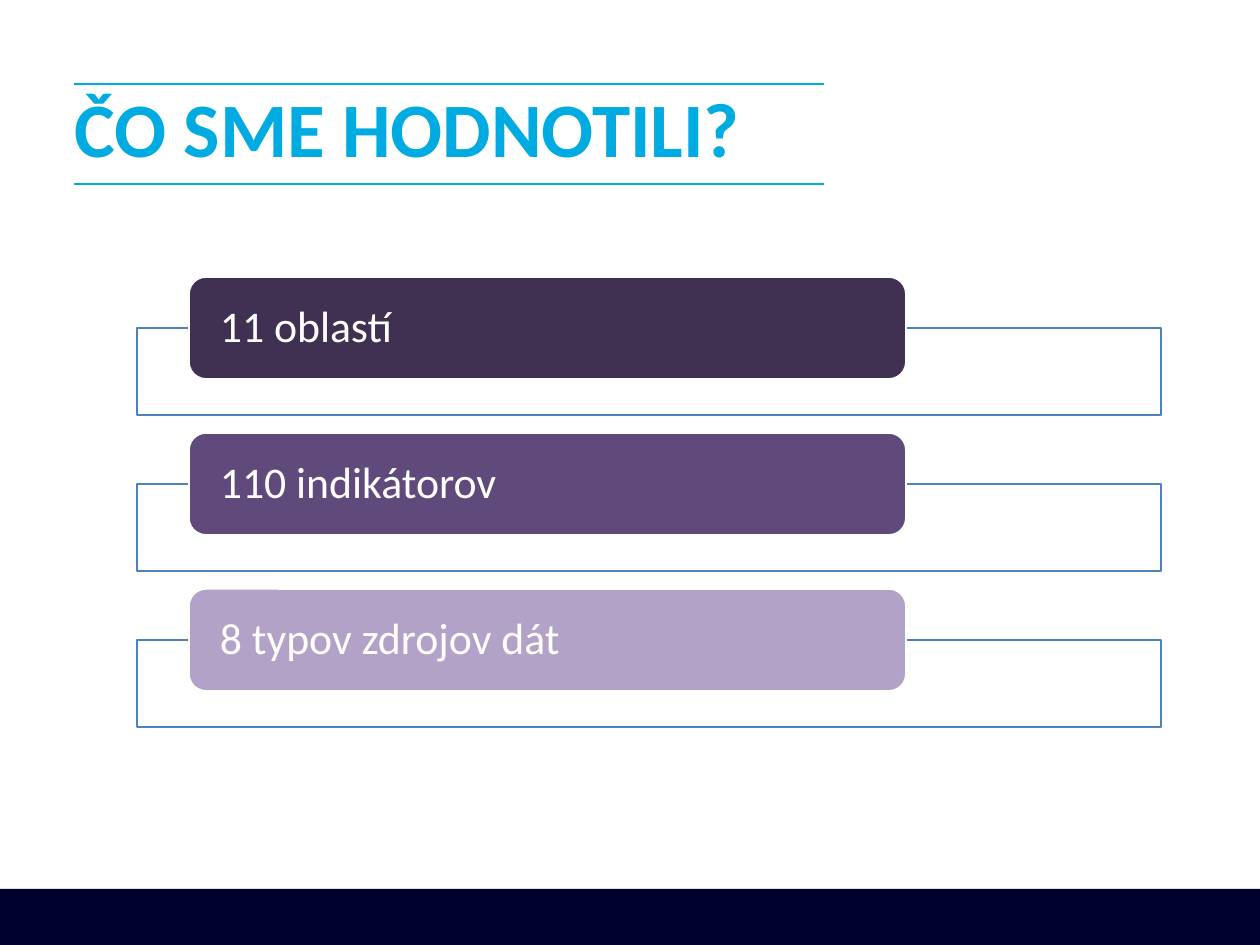
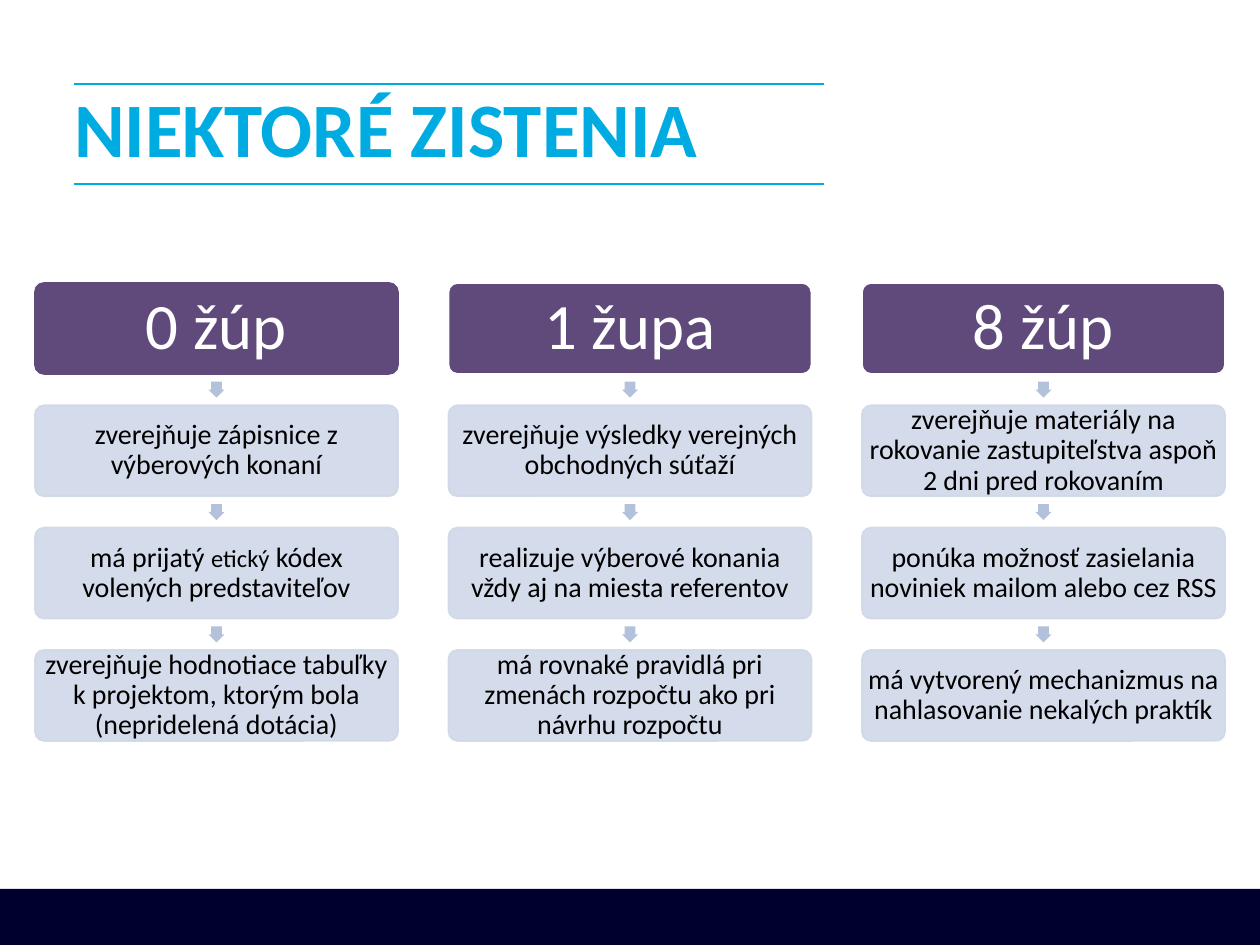
from lxml import etree
from pptx import Presentation
from pptx import util as u
from pptx.dml.color import RGBColor
from pptx.enum import shapes, text
from pptx.oxml import ns

SCALE = 914400 / 126
SLIDE_WIDTH, SLIDE_HEIGHT = 1260, 945
FONT = "Calibri"
COLOURS = {
    "title": "00ABE2",
    "footer": "00002E",
    "white": "FFFFFF",
    "black": "000000",
    "frame": "4F81BD",
    "dark_purple": "403152",
    "purple": "604A7B",
    "light_purple": "B3A2C7",
    "card": "D0D8E8",
    "arrow": "B3C1DB",
}
Shape = shapes.MSO_SHAPE

AREAS = [
    ("11 oblastí", "dark_purple"),
    ("110 indikátorov", "purple"),
    ("8 typov zdrojov dát", "light_purple"),
]
FINDINGS = [
    ("0 žúp", "purple", [
        "zverejňuje zápisnice z výberových konaní",
        [("má prijatý ", 16), ("etický", 14), (" kódex volených predstaviteľov", 16)],
        "zverejňuje hodnotiace tabuľky k projektom, ktorým bola (nepridelená dotácia)",
    ]),
    ("1 župa", "white", [
        "zverejňuje výsledky verejných obchodných súťaží",
        "realizuje výberové konania vždy aj na miesta referentov",
        "má rovnaké pravidlá pri zmenách rozpočtu ako pri návrhu rozpočtu",
    ]),
    ("8 žúp", "white", [
        "zverejňuje materiály na rokovanie zastupiteľstva aspoň 2 dni pred rokovaním",
        "ponúka možnosť zasielania noviniek mailom alebo cez RSS",
        "má vytvorený mechanizmus na nahlasovanie nekalých praktík",
    ]),
]


def px(length):
    return u.Emu(round(length * SCALE))


def rgb(name):
    return RGBColor.from_string(COLOURS[name])


def write(shape, content, size, colour, bold=False, centred=False, inset=(0, 0)):
    frame = shape.text_frame
    frame.word_wrap = True
    frame.vertical_anchor = text.MSO_ANCHOR.MIDDLE
    frame.margin_left = frame.margin_right = px(inset[0])
    frame.margin_top = frame.margin_bottom = px(inset[1])
    paragraph = frame.paragraphs[0]
    paragraph.alignment = text.PP_ALIGN.CENTER if centred else text.PP_ALIGN.LEFT
    paragraph.line_spacing = 0.9
    runs = [(content, size)] if isinstance(content, str) else content
    for words, run_size in runs:
        run = paragraph.add_run()
        run.text = words
        run.font.name = FONT
        run.font.size = u.Pt(run_size)
        run.font.bold = bold
        run.font.color.rgb = rgb(colour)


def add_block(slide, kind, box, fill, line=None, opacity=100, adjustments=()):
    shape = slide.shapes.add_shape(kind, *map(px, box))
    shape.shadow.inherit = False
    for index, value in enumerate(adjustments):
        shape.adjustments[index] = value
    shape.fill.solid()
    shape.fill.fore_color.rgb = rgb(fill)
    if line:
        shape.line.color.rgb = rgb(line)
        shape.line.width = u.Pt(1)
    else:
        shape.line.fill.background()
    if opacity < 100:
        for colour in shape.element.spPr.iter(ns.qn("a:srgbClr")):
            if colour.get("val") == COLOURS[fill]:
                etree.SubElement(colour, ns.qn("a:alpha"), val=str(opacity * 1000))
    return shape


def add_title(slide, title, box):
    left, top, width, height = box
    for y in (top + 6, top + 106):
        rule = slide.shapes.add_connector(
            shapes.MSO_CONNECTOR.STRAIGHT, px(left), px(y), px(left + 750), px(y))
        rule.line.color.rgb = rgb("title")
        rule.line.width = u.Pt(1)
        etree.SubElement(rule.element.spPr, ns.qn("a:effectLst"))
    title_box = slide.shapes.add_textbox(*map(px, box))
    write(title_box, title, 44, "title", bold=True)


def add_base_slide(presentation, title):
    slide = presentation.slides.add_slide(presentation.slide_layouts[6])
    add_block(slide, Shape.RECTANGLE, (0, 889, SLIDE_WIDTH, 56), "footer")
    add_title(slide, title, (74, 78, 873, 110))
    return slide


def add_area_list(slide, areas, box):
    left, top, width, height = box
    row_height = 138
    pitch = (height - row_height) / (len(areas) - 1)
    for index, (label, colour) in enumerate(areas):
        y = top + index * pitch
        add_block(slide, Shape.RECTANGLE, (left, y + 51, width, 87),
                  "white", "frame", opacity=90)
        tab = add_block(slide, Shape.ROUNDED_RECTANGLE, (left + 52, y, 717, 102),
                        colour, "white")
        write(tab, label, 25, "white", inset=(26, 0))


def add_finding_column(slide, heading, outline, findings, box):
    left, top, width, height = box
    card_height, arrow_size = 91, 16
    pitch = (height - card_height) / len(findings)
    gap = pitch - card_height
    header = add_block(slide, Shape.ROUNDED_RECTANGLE, (left, top, width, card_height),
                       "purple", outline, adjustments=(0.1,))
    write(header, heading, 37, "white", centred=True, inset=(6, 6))
    for index, finding in enumerate(findings, 1):
        y = top + index * pitch
        arrow_box = (left + (width - arrow_size) / 2, y - (gap + arrow_size) / 2,
                     arrow_size, arrow_size)
        add_block(slide, Shape.DOWN_ARROW, arrow_box, "arrow", adjustments=(0.67, 0.5))
        card = add_block(slide, Shape.ROUNDED_RECTANGLE, (left, y, width, card_height),
                         "card", "card", opacity=90, adjustments=(0.1,))
        write(card, finding, 16, "black", centred=True, inset=(2, 2))


def add_finding_grid(slide, columns, box):
    left, top, width, height = box
    column_width = 363
    pitch = (width - column_width) / (len(columns) - 1)
    for index, (heading, outline, findings) in enumerate(columns):
        add_finding_column(slide, heading, outline, findings,
                           (left + index * pitch, top, column_width, height))


def main():
    presentation = Presentation()
    presentation.slide_width = px(SLIDE_WIDTH)
    presentation.slide_height = px(SLIDE_HEIGHT)
    areas_slide = add_base_slide(presentation, "ČO SME HODNOTILI?")
    add_area_list(areas_slide, AREAS, (137, 277, 1024, 450))
    findings_slide = add_base_slide(presentation, "NIEKTORÉ ZISTENIA")
    add_finding_grid(findings_slide, FINDINGS, (35, 283, 1190, 458))
    presentation.save("out.pptx")


if __name__ == "__main__":
    main()
